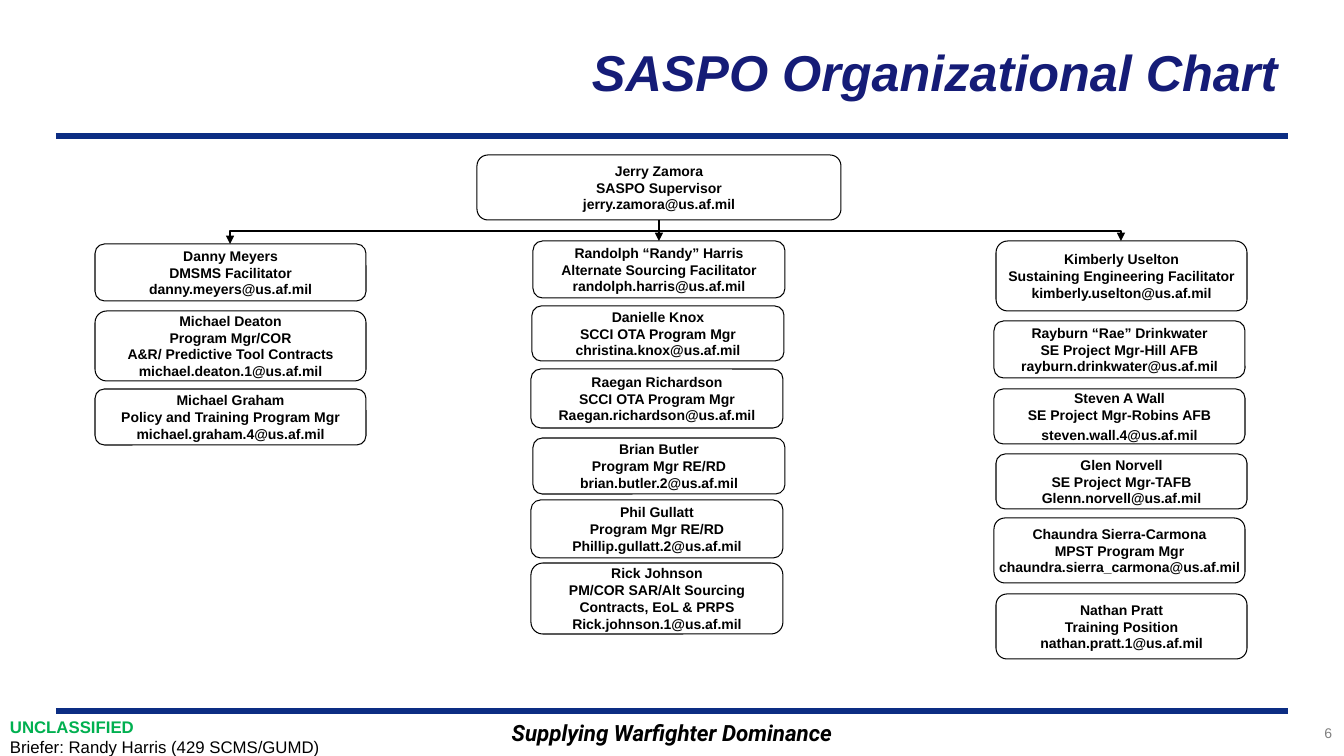
from lxml.etree import SubElement
from pptx import Presentation
from pptx.dml.color import RGBColor
from pptx.enum.shapes import MSO_CONNECTOR as CONN, MSO_SHAPE as SHAPE
from pptx.enum.text import MSO_ANCHOR as ANCHOR, PP_ALIGN as ALIGN
from pptx.oxml.ns import qn
from pptx.util import Pt

COLORS = {"title": "151C77", "rule": "0C2D83", "green": "00B050",
          "black": "000000", "white": "FFFFFF", "gray": "808080"}
PX = 914400 / 100.8
BUS_Y = 231
RULES = [(136, 56, 1288), (711, 56, 1288)]

SUPERVISOR = (477, 155, 364, 65,
              ["Jerry Zamora", "SASPO Supervisor", "jerry.zamora@us.af.mil"])

TEAMS = [
    (271, [
        (95, 244, 57, ["Danny Meyers", "DMSMS Facilitator", "danny.meyers@us.af.mil"]),
        (95, 311, 70, ["Michael Deaton", "Program Mgr/COR",
                       "A&R/ Predictive Tool Contracts", "michael.deaton.1@us.af.mil"]),
        (95, 389, 56, ["Michael Graham", "Policy and Training Program Mgr",
                       "michael.graham.4@us.af.mil"]),
    ]),
    (252, [
        (533, 241, 57, ["Randolph “Randy” Harris", "Alternate Sourcing Facilitator",
                        "randolph.harris@us.af.mil"]),
        (532, 306, 55, ["Danielle Knox", "SCCI OTA Program Mgr", "christina.knox@us.af.mil"]),
        (531, 369, 59, ["Raegan Richardson", "SCCI OTA Program Mgr",
                        "Raegan.richardson@us.af.mil"]),
        (533, 438, 56, ["Brian Butler", "Program Mgr RE/RD", "brian.butler.2@us.af.mil"]),
        (531, 500, 58, ["Phil Gullatt", "Program Mgr RE/RD", "Phillip.gullatt.2@us.af.mil"]),
        (531, 563, 71, ["Rick Johnson", "PM/COR SAR/Alt Sourcing",
                        "Contracts, EoL & PRPS", "Rick.johnson.1@us.af.mil"]),
    ]),
    (251, [
        (996, 241, 70, ["Kimberly Uselton", "Sustaining Engineering Facilitator",
                        "kimberly.uselton@us.af.mil"]),
        (994, 321, 57, ["Rayburn “Rae” Drinkwater", "SE Project Mgr-Hill AFB",
                        "rayburn.drinkwater@us.af.mil"]),
        (994, 389, 55, ["Steven A Wall", "SE Project Mgr-Robins AFB",
                        "steven.wall.4@us.af.mil"]),
        (996, 454, 55, ["Glen Norvell", "SE Project Mgr-TAFB", "Glenn.norvell@us.af.mil"]),
        (994, 518, 65, ["Chaundra Sierra-Carmona", "MPST Program Mgr",
                        "chaundra.sierra_carmona@us.af.mil"]),
        (996, 594, 65, ["Nathan Pratt", "Training Position", "nathan.pratt.1@us.af.mil"]),
    ]),
]
SPACED_LINE = "steven.wall.4@us.af.mil"

LABELS = [
    ((238, 8, 1050, 126), ALIGN.RIGHT, ANCHOR.MIDDLE,
     [("SASPO Organizational Chart", 36, "Arial", "title", True, True)]),
    ((56, 714, 1232, 37), ALIGN.CENTER, ANCHOR.TOP,
     [("Supplying Warfighter Dominance", 16, "Roboto", "black", True, True)]),
    ((0, 712, 356, 50), ALIGN.LEFT, ANCHOR.TOP,
     [("UNCLASSIFIED", 12, "Arial", "green", True, False),
      ("Briefer: Randy Harris (429 SCMS/GUMD)", 12, "Arial", "black", False, False)]),
    ((1174, 720, 168, 33), ALIGN.RIGHT, ANCHOR.TOP,
     [("6", 10, "Arial", "gray", False, False)]),
]


def px(*values):
    return [round(v * PX) for v in values]


def rgb(name):
    return RGBColor.from_string(COLORS[name])


def write(tf, lines, align):
    for i, (text, size, font, color, bold, italic) in enumerate(lines):
        p = tf.add_paragraph() if i else tf.paragraphs[0]
        p.alignment = align
        if text == SPACED_LINE:
            p.space_before = Pt(2)
        r = p.add_run()
        r.text = text
        r.font.size, r.font.name = Pt(size), font
        r.font.bold, r.font.italic = bold, italic
        r.font.color.rgb = rgb(color)


def add_label(box, align, anchor, lines):
    tf = slide.shapes.add_textbox(*px(*box)).text_frame
    tf.word_wrap = True
    tf.vertical_anchor = anchor
    write(tf, lines, align)


def add_person(x, y, w, h, lines):
    sp = slide.shapes.add_shape(SHAPE.FLOWCHART_ALTERNATE_PROCESS, *px(x, y, w, h))
    sp.shadow.inherit = False
    sp.fill.solid()
    sp.fill.fore_color.rgb = rgb("white")
    sp.line.color.rgb = rgb("black")
    sp.line.width = Pt(0.75)
    tf = sp.text_frame
    tf.margin_left = tf.margin_top = tf.margin_right = tf.margin_bottom = 0
    tf.word_wrap = False
    tf.vertical_anchor = ANCHOR.MIDDLE
    write(tf, [(t, 10, "Arial", "black", True, False) for t in lines], ALIGN.CENTER)


def add_line(kind, x1, y1, x2, y2, color, width, arrow=False):
    line = slide.shapes.add_connector(kind, *px(x1, y1, x2, y2))
    line.line.color.rgb = rgb(color)
    line.line.width = Pt(width)
    if arrow:
        SubElement(line.line._get_or_add_ln(), qn("a:tailEnd"), type="triangle")
    SubElement(line._element.spPr, qn("a:effectLst"))
    return line


def add_branch(x1, y1, x2, y2):
    if x1 == x2:
        add_line(CONN.STRAIGHT, x1, y1, x2, y2, "black", 1, True)
        return
    cx, cy = (x1 + x2) / 2, (y1 + y2) / 2
    half_w, half_h = (y2 - y1) / 2, abs(x2 - x1) / 2
    side = 1 if x2 > x1 else -1
    line = add_line(CONN.ELBOW, cx + side * half_w, cy - half_h,
                    cx - side * half_w, cy + half_h, "black", 1, True)
    spPr = line._element.spPr
    spPr.find(qn("a:xfrm")).set("rot", "16200000" if side > 0 else "5400000")
    geom = spPr.find(qn("a:prstGeom"))
    guides = geom.find(qn("a:avLst"))
    if guides is None:
        guides = SubElement(geom, qn("a:avLst"))
    bend = round(100000 * (BUS_Y - y1) / (y2 - y1))
    SubElement(guides, qn("a:gd"), name="adj1", fmla=f"val {bend}")


prs = Presentation()
prs.slide_width, prs.slide_height = px(1344, 756)
slide = prs.slides.add_slide(prs.slide_layouts[6])

for y, left, right in RULES:
    add_line(CONN.STRAIGHT, left, y, right, y, "rule", 4.5)
for label in LABELS:
    add_label(*label)

add_person(*SUPERVISOR)
boss_x, boss_y, boss_w, boss_h, _ = SUPERVISOR
for width, people in TEAMS:
    for x, y, h, lines in people:
        add_person(x, y, width, h, lines)
    lead_x, lead_y = people[0][:2]
    add_branch(boss_x + boss_w // 2, boss_y + boss_h, lead_x + width // 2, lead_y)

prs.save("out.pptx")
